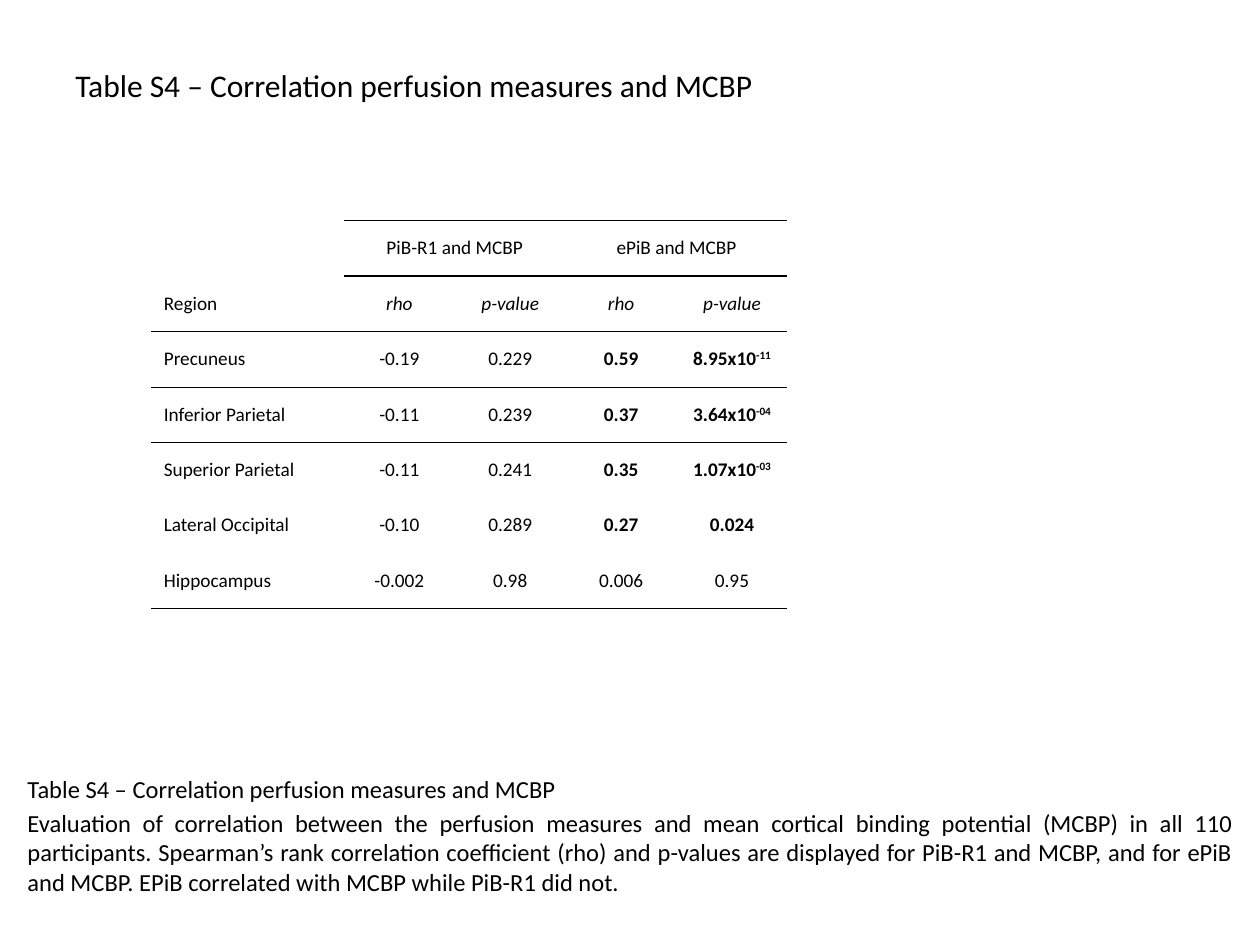
from lxml.etree import SubElement
from pptx import Presentation
from pptx.dml.color import RGBColor
from pptx.enum.text import MSO_ANCHOR, PP_ALIGN
from pptx.oxml.ns import qn
from pptx.util import Inches, Pt

FONT = "Calibri"
BLACK = "000000"
NO_STYLE = "{2D5ABB26-0587-4C30-8999-92F81FD0307C}"
TITLE = "Table S4 – Correlation perfusion measures and MCBP"
NOTE = ("Evaluation of correlation between the perfusion measures and mean "
        "cortical binding potential (MCBP) in all 110 participants. Spearman’s "
        "rank correlation coefficient (rho) and p-values are displayed for "
        "PiB-R1 and MCBP, and for ePiB and MCBP. EPiB correlated with MCBP "
        "while PiB-R1 did not.")
# A caret starts a superscript
ROWS = [
    ["", "PiB-R1 and MCBP", "", "ePiB and MCBP", ""],
    ["Region", "rho", "p-value", "rho", "p-value"],
    ["Precuneus", "-0.19", "0.229", "0.59", "8.95x10^-11"],
    ["Inferior Parietal", "-0.11", "0.239", "0.37", "3.64x10^-04"],
    ["Superior Parietal", "-0.11", "0.241", "0.35", "1.07x10^-03"],
    ["Lateral Occipital", "-0.10", "0.289", "0.27", "0.024"],
    ["Hippocampus", "-0.002", "0.98", "0.006", "0.95"],
]
COL_WIDTHS = [1.53] + [0.88] * 4
ROW_HEIGHT = 0.44
# Rules across the table: row, side, width in points, first column
RULES = [(0, "T", 1, 1), (0, "B", 1, 1), (1, "T", 1, 1),
         (1, "B", 0.25, 0), (2, "T", 0.25, 0),
         (2, "B", 0.25, 0), (3, "T", 0.25, 0), (6, "B", 1, 0)]


def color(hex_value):
    return RGBColor.from_string(hex_value)


class SlideBuilder:
    def __init__(self, slide):
        self.s = slide

    def style(self, p, size, align=PP_ALIGN.LEFT, bold=False, italic=False):
        p.alignment = align
        p.font.name = FONT
        p.font.size = Pt(size)
        p.font.color.rgb = color(BLACK)
        p.font.bold = bold
        p.font.italic = italic

    def text(self, box, paragraphs, size, align=PP_ALIGN.LEFT,
             anchor=MSO_ANCHOR.TOP, space_before=0):
        tf = self.s.shapes.add_textbox(*map(Inches, box)).text_frame
        tf.word_wrap = True
        tf.vertical_anchor = anchor
        for i, content in enumerate(paragraphs):
            p = tf.add_paragraph() if i else tf.paragraphs[0]
            p.text = content
            p.space_before = Pt(space_before)
            self.style(p, size, align)

    def cell(self, cell, content, **style):
        cell.vertical_anchor = MSO_ANCHOR.MIDDLE
        cell.fill.background()
        p = cell.text_frame.paragraphs[0]
        base, _, power = content.partition("^")
        p.add_run().text = base
        if power:
            r = p.add_run()
            r.text = power
            r.font._element.set("baseline", "30000")
        self.style(p, 11, **style)

    def border(self, cell, side, width):
        tc_pr = cell._tc.get_or_add_tcPr()
        ln = SubElement(tc_pr, qn(f"a:ln{side}"), w=str(Pt(width)))
        fill = SubElement(ln, qn("a:solidFill"))
        SubElement(fill, qn("a:srgbClr"), val=BLACK)
        # Borders come before the cell fill, top before bottom
        tc_pr.insert(len(tc_pr.findall(qn("a:lnT"))) if side == "B" else 0, ln)

    def table(self, left, top):
        frame = self.s.shapes.add_table(
            len(ROWS), len(COL_WIDTHS), Inches(left), Inches(top),
            Inches(sum(COL_WIDTHS)), Inches(ROW_HEIGHT * len(ROWS)))
        table = frame.table
        table.first_row = table.horz_banding = False
        table._tbl.tblPr.find(qn("a:tableStyleId")).text = NO_STYLE
        for column, width in zip(table.columns, COL_WIDTHS):
            column.width = Inches(width)
        for row in table.rows:
            row.height = Inches(ROW_HEIGHT)
        for i, row in enumerate(ROWS):
            for j, content in enumerate(row):
                self.cell(table.cell(i, j), content,
                          align=PP_ALIGN.CENTER if j else PP_ALIGN.LEFT,
                          bold=2 <= i <= 5 and j >= 3,
                          italic=i == 1 and j > 0)
        for i, side, width, first in RULES:
            for j in range(first, len(COL_WIDTHS)):
                self.border(table.cell(i, j), side, width)
        for j in (1, 3):
            table.cell(0, j).merge(table.cell(0, j + 1))


def main():
    prs = Presentation()
    prs.slide_width, prs.slide_height = Inches(10), Inches(7.5)
    builder = SlideBuilder(prs.slides.add_slide(prs.slide_layouts[6]))

    # Title
    builder.text((0.5, 0.3, 9, 0.75), [TITLE], 18, anchor=MSO_ANCHOR.MIDDLE)
    # Correlation table
    builder.table(1.2, 1.75)
    # Caption
    builder.text((0.12, 6.09, 9.77, 1.16), [TITLE, NOTE], 14,
                 align=PP_ALIGN.JUSTIFY, space_before=2.8)

    prs.save("out.pptx")


if __name__ == "__main__":
    main()
